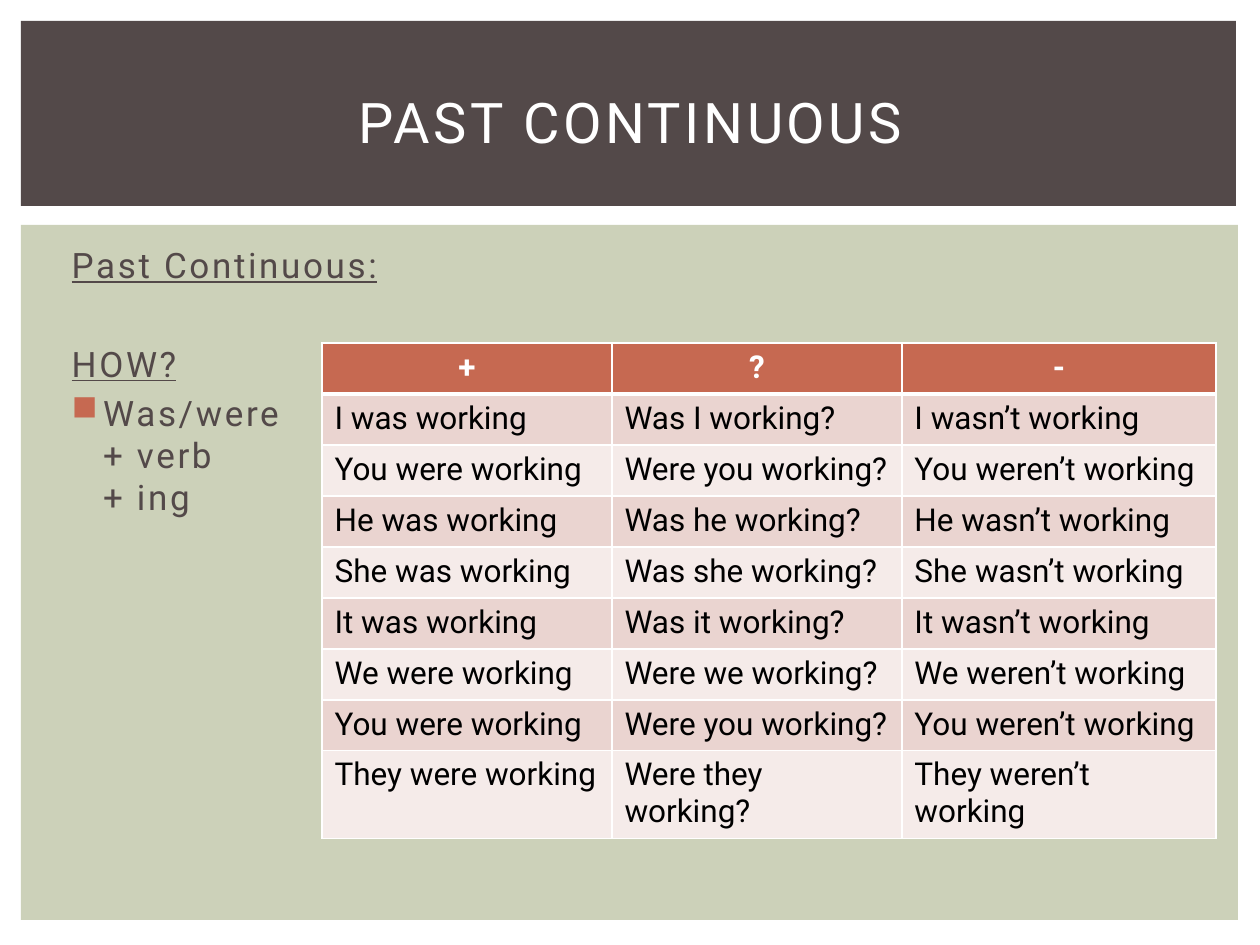
from lxml import etree
from pptx import Presentation
from pptx import util as u
from pptx.dml.color import RGBColor
from pptx.enum import shapes, text
from pptx.oxml.ns import qn

PX = 914400 // 126
FONT = "Roboto"
WHITE, BLACK, BROWN, RUST, SAGE = "FFFFFF", "000000", "534949", "C66951", "CCD1B9"
BANDS = ["F5EBE9", "EAD4D0"]

TITLE = "PAST CONTINUOUS"
PANELS = [((21, 225, 1217, 695), SAGE), ((21, 21, 1215, 185), BROWN)]
# text, underlined, bulleted, space before in points
NOTES = [
    ("Past Continuous:", True, False, 4),
    ("HOW?", True, False, 32.5),
    ("Was/were\n+ verb\n+ ing", False, True, 4),
]
HEADER = ("+", "?", "-")
FORMS = [
    ("I was working", "Was I working?", "I wasn’t working"),
    ("You were working", "Were you working?", "You weren’t working"),
    ("He was working", "Was he working?", "He wasn’t working"),
    ("She was working", "Was she working?", "She wasn’t working"),
    ("It was working", "Was it working?", "It wasn’t working"),
    ("We were working", "Were we working?", "We weren’t working"),
    ("You were working", "Were you working?", "You weren’t working"),
    ("They were working", "Were they working?", "They weren’t working"),
]
COLUMNS = [290, 290, 314]
ROWS = [51] * 7 + [50, 86]


def px(*lengths):
    return [u.Emu(length * PX) for length in lengths]


def color(value):
    return RGBColor.from_string(value)


def set_font(para, size, value, bold=False, underline=False, spacing=0):
    font = para.font
    font.name, font.size = FONT, u.Pt(size)
    font.bold, font.underline = bold, underline
    font.color.rgb = color(value)
    if spacing:
        font._element.set("spc", str(int(spacing * 100)))


def add_panel(slide, place, fill):
    panel = slide.shapes.add_shape(shapes.MSO_SHAPE.RECTANGLE, *px(*place))
    panel.shadow.inherit = False
    panel.fill.solid()
    panel.fill.fore_color.rgb = color(fill)
    panel.line.fill.background()


def add_frame(slide, place):
    frame = slide.shapes.add_textbox(*px(*place)).text_frame
    frame.word_wrap = True
    return frame


def set_indent(para, bulleted):
    props = para._p.get_or_add_pPr()
    props.set("marL", str(u.Inches(0.3 if bulleted else 0.05)))
    props.set("indent", str(u.Inches(-0.25 if bulleted else 0)))
    if bulleted:
        tint = etree.SubElement(props, qn("a:buClr"))
        etree.SubElement(tint, qn("a:srgbClr"), val=RUST)
        etree.SubElement(props, qn("a:buChar"), char="■")


def set_borders(cell, bottom):
    """Draw white borders; bottom is the lower edge's width in points."""
    props = cell._tc.get_or_add_tcPr()
    widths = {"a:lnL": 1, "a:lnR": 1, "a:lnT": 1, "a:lnB": bottom}
    for place, (tag, width) in enumerate(widths.items()):
        line = etree.Element(qn(tag), w=str(u.Pt(width)))
        fill = etree.SubElement(line, qn("a:solidFill"))
        etree.SubElement(fill, qn("a:srgbClr"), val=WHITE)
        props.insert(place, line)


def add_forms_table(slide):
    lines = [HEADER] + FORMS
    table = slide.shapes.add_table(
        len(lines), len(HEADER), *px(322, 343, sum(COLUMNS), sum(ROWS))).table
    for column, width in zip(table.columns, px(*COLUMNS)):
        column.width = width
    for row, height in zip(table.rows, px(*ROWS)):
        row.height = height
    for r, line in enumerate(lines):
        head = r == 0
        for c, wording in enumerate(line):
            cell = table.cell(r, c)
            cell.text = wording
            cell.fill.solid()
            cell.fill.fore_color.rgb = color(RUST if head else BANDS[r % 2])
            set_borders(cell, 3 if head else 1)
            if r == 1:
                cell._tc.tcPr.find(qn("a:lnT")).set("w", str(u.Pt(3)))
            para = cell.text_frame.paragraphs[0]
            para.alignment = text.PP_ALIGN.CENTER if head else text.PP_ALIGN.LEFT
            set_font(para, 18, WHITE if head else BLACK, bold=head)


def main():
    deck = Presentation()
    deck.slide_width, deck.slide_height = px(1260, 945)
    slide = deck.slides.add_slide(deck.slide_layouts[6])
    for place, fill in PANELS:
        add_panel(slide, place, fill)

    notes = add_frame(slide, (53, 237, 1158, 607))
    for i, (wording, underline, bulleted, before) in enumerate(NOTES):
        para = notes.add_paragraph() if i else notes.paragraphs[0]
        para.text = wording.replace("\n", "\v")
        set_indent(para, bulleted)
        para.space_before = u.Pt(before)
        set_font(para, 20, BROWN, underline=underline, spacing=1.5)

    title = add_frame(slide, (53, 49, 1155, 145))
    title.vertical_anchor = text.MSO_ANCHOR.MIDDLE
    para = title.paragraphs[0]
    para.text = TITLE
    para.alignment = text.PP_ALIGN.CENTER
    set_font(para, 32, WHITE, spacing=2)

    add_forms_table(slide)
    deck.save("out.pptx")


if __name__ == "__main__":
    main()
